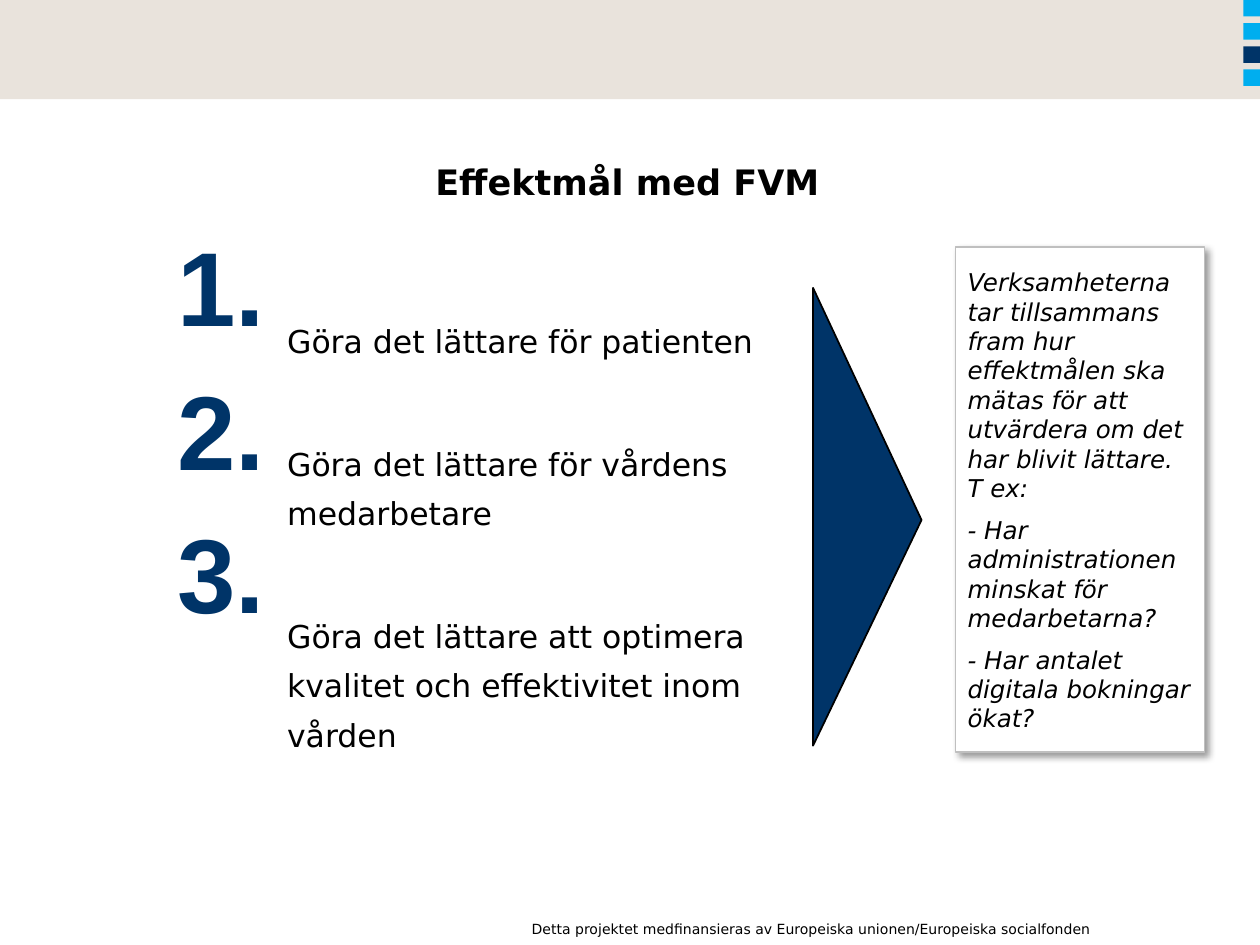
import pptx
import pptx.util
from lxml import etree
from pptx.dml.color import RGBColor
from pptx.enum.shapes import MSO_SHAPE
from pptx.enum.text import MSO_ANCHOR, PP_ALIGN
from pptx.oxml.ns import qn

Pt = pptx.util.Pt
COLORS = {"band": "E9E3DC", "sky": "00AEEF", "navy": "003468",
          "black": "000000", "white": "FFFFFF", "border": "BFBFBF"}
GOALS = ["Göra det lättare för patienten",
         "Göra det lättare för vårdens medarbetare",
         "Göra det lättare att optimera kvalitet och effektivitet inom vården"]
MEASURES = ["Verksamheterna tar tillsammans fram hur effektmålen ska mätas "
            "för att utvärdera om det har blivit lättare. T ex:",
            "- Har administrationen minskat för medarbetarna?",
            "- Har antalet digitala bokningar ökat?"]


def color(name):
    return RGBColor.from_string(COLORS[name])


def add_text(slide, box, paragraphs, *, size, font="DejaVu Sans", ink="black",
             bold=False, italic=False, align=PP_ALIGN.LEFT, anchor=MSO_ANCHOR.TOP,
             insets=(7.2, 3.6, 7.2, 3.6), gap=0, line_spacing=None):
    """Insets run left, top, right, bottom; gap is the space between paragraphs."""
    frame = slide.shapes.add_textbox(*map(Pt, box)).text_frame
    frame.word_wrap = True
    frame.vertical_anchor = anchor
    (frame.margin_left, frame.margin_top,
     frame.margin_right, frame.margin_bottom) = map(Pt, insets)
    for index, text in enumerate(paragraphs):
        paragraph = frame.add_paragraph() if index else frame.paragraphs[0]
        paragraph.alignment = align
        if index:
            paragraph.space_before = Pt(gap)
        if line_spacing:
            paragraph.line_spacing = line_spacing
        run = paragraph.add_run()
        run.text = text
        run.font.name, run.font.size = font, Pt(size)
        run.font.bold, run.font.italic = bold, italic
        run.font.color.rgb = color(ink)


def add_figure(slide, kind, box, fill, line=None, line_width=1):
    figure = slide.shapes.add_shape(kind, *map(Pt, box))
    figure.shadow.inherit = False
    figure.fill.solid()
    figure.fill.fore_color.rgb = color(fill)
    if line:
        figure.line.color.rgb = color(line)
        figure.line.width = Pt(line_width)
    else:
        figure.line.fill.background()
    return figure


def cast_shadow(figure):
    effects = figure._element.spPr.find(qn("a:effectLst"))
    shadow = etree.SubElement(effects, qn("a:outerShdw"), blurRad=str(Pt(4)),
                              dist=str(Pt(3)), dir="2700000", algn="tl", rotWithShape="0")
    tint = etree.SubElement(shadow, qn("a:srgbClr"), val=COLORS["black"])
    etree.SubElement(tint, qn("a:alpha"), val="40000")


def add_header(slide, left, top, width, height):
    add_figure(slide, MSO_SHAPE.RECTANGLE, (left, top, width, height), "band")
    side, pitch = 9.4, 13.25
    for row, fill in enumerate(["sky", "sky", "navy", "sky"]):
        add_figure(slide, MSO_SHAPE.RECTANGLE,
                   (left + width - side, top + row * pitch, side, side), fill)


def add_goals(slide, left, top, width, height):
    number_width, number_height, pitch = 61.2, 49, 82
    add_text(slide, (left + number_width, top + 55.4, width - number_width, height - 55.4),
             GOALS, size=18, gap=42.2, line_spacing=1.3)
    for row in range(len(GOALS)):
        add_text(slide, (left, top + row * pitch, number_width, number_height),
                 [f"{row + 1}."], size=60, font="Arial", ink="navy", bold=True,
                 align=PP_ALIGN.CENTER, insets=(2.9, 8, 2.9, 2.9))


def add_arrowhead(slide, left, top, width, height):
    """Triangle that points right and fills the given box."""
    box = (left + (width - height) / 2, top + (height - width) / 2, height, width)
    arrowhead = add_figure(slide, MSO_SHAPE.ISOSCELES_TRIANGLE, box, "navy", "black")
    arrowhead.adjustments[0] = 0.507
    arrowhead.rotation = 90


def add_measures(slide, left, top, width, height):
    card = add_figure(slide, MSO_SHAPE.RECTANGLE, (left, top, width, height),
                      "white", "border", 0.75)
    cast_shadow(card)
    add_text(slide, (left, top + 8, width, height - 8), MEASURES,
             size=14, italic=True, gap=7)


def main():
    deck = pptx.Presentation()
    deck.slide_width, deck.slide_height = Pt(720), Pt(540)
    slide = deck.slides.add_slide(deck.slide_layouts[6])
    add_header(slide, 0, 0, 720, 56.6)
    add_text(slide, (288.7, 522.7, 342, 17.3),
             ["Detta projektet medfinansieras av Europeiska unionen/Europeiska socialfonden"],
             size=8, align=PP_ALIGN.RIGHT)
    add_text(slide, (36, 67.7, 648, 51), ["Effektmål med FVM"], size=20, bold=True,
             align=PP_ALIGN.CENTER, anchor=MSO_ANCHOR.BOTTOM, insets=(0, 2.9, 2.9, 2.9))
    add_goals(slide, 95.8, 118.8, 378, 288)
    add_measures(slide, 545.8, 141.1, 142.6, 288.7)
    add_arrowhead(slide, 464.6, 164.5, 62, 261.6)
    deck.save("out.pptx")


if __name__ == "__main__":
    main()
